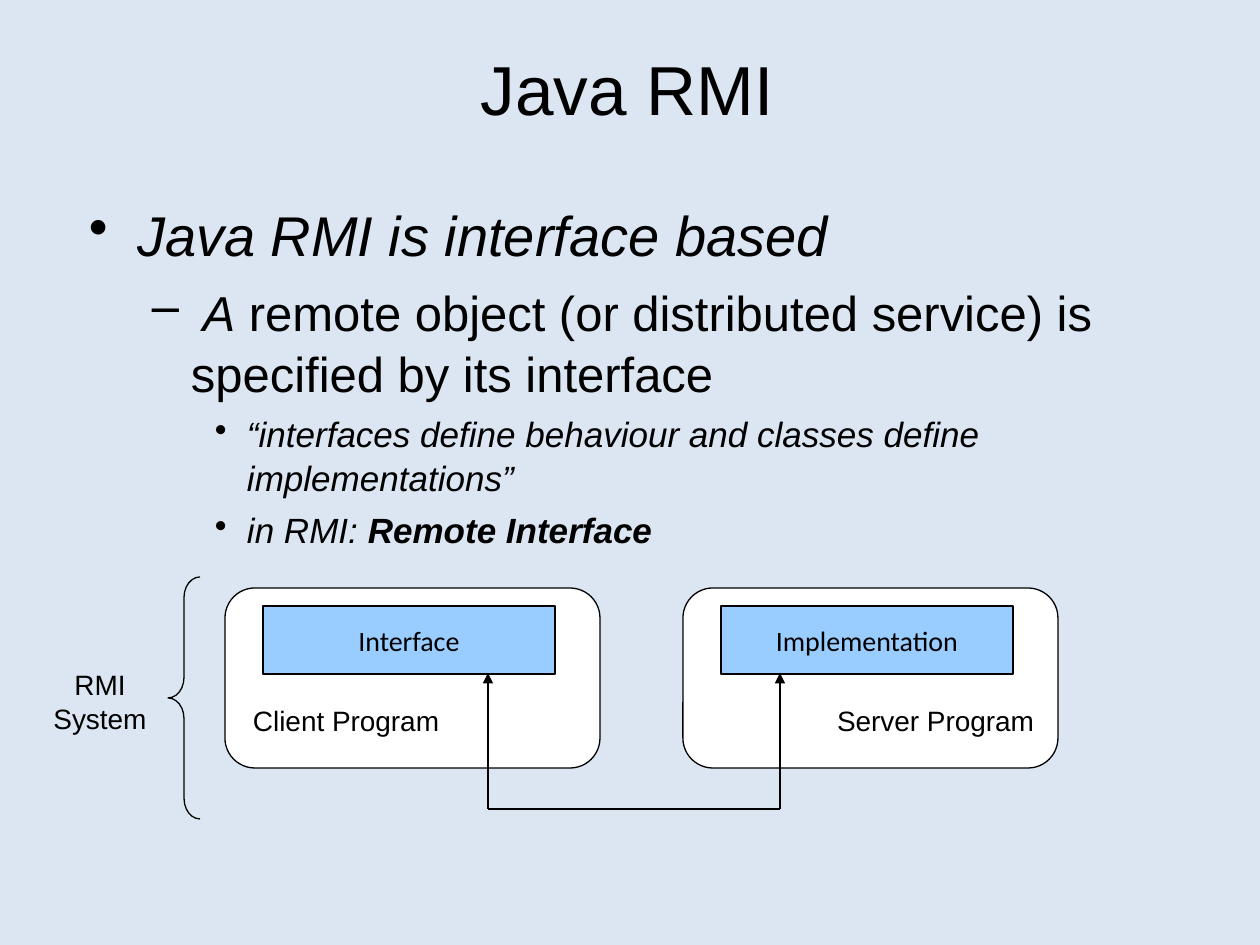
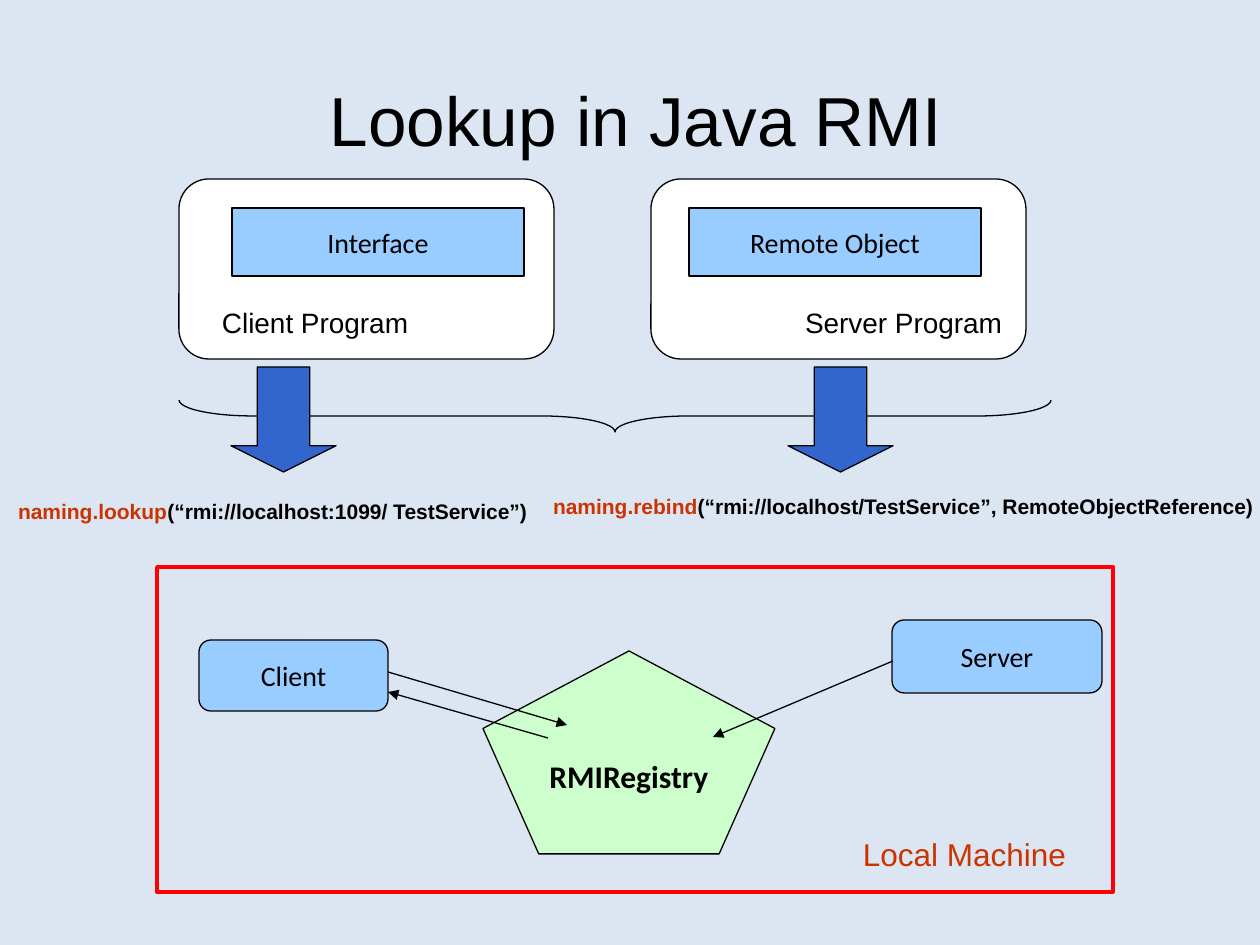
"""Build two slides on Java RMI: interface based design and registry lookup."""
import lxml.etree
import pptx
import pptx.dml.color
import pptx.enum.shapes
import pptx.enum.text
import pptx.oxml.ns
import pptx.util

EMU_PER_PX = 914400 / 126
BACKGROUND = pptx.dml.color.RGBColor(0xDC, 0xE6, 0xF2)
BLACK = pptx.dml.color.RGBColor(0x00, 0x00, 0x00)
WHITE = pptx.dml.color.RGBColor(0xFF, 0xFF, 0xFF)
LIGHT_BLUE = pptx.dml.color.RGBColor(0x99, 0xCC, 0xFF)
ARROW_BLUE = pptx.dml.color.RGBColor(0x33, 0x66, 0xCC)
LIGHT_GREEN = pptx.dml.color.RGBColor(0xCC, 0xFF, 0xCC)
RED = pptx.dml.color.RGBColor(0xFF, 0x00, 0x00)
RUST = pptx.dml.color.RGBColor(0xCC, 0x33, 0x00)

SHAPE = pptx.enum.shapes.MSO_SHAPE
CONNECTOR = pptx.enum.shapes.MSO_CONNECTOR
ALIGN = pptx.enum.text.PP_ALIGN
ANCHOR = pptx.enum.text.MSO_ANCHOR

LINE_WIDTH = 0.75
PROGRAM_SIZE = (375, 180)
PART_SIZE = (292, 68)
LABEL_SIZE = (248, 45)
CLIENT_LABEL_SHIFT = -22
SERVER_LABEL_SHIFT = 104
LABEL_DROP = 92
BULLET_LEVELS = [
    {"mark": "•", "margin": 48, "hanging": 48, "size": 32, "before": 0},
    {"mark": "–", "margin": 102, "hanging": 39, "size": 28, "before": 7},
    {"mark": "•", "margin": 158, "hanging": 32, "size": 20, "before": 5},
]


def px(*lengths):
    """Turn lengths in px into a list of EMU lengths."""
    return [pptx.util.Emu(round(length * EMU_PER_PX)) for length in lengths]


def add_run(paragraph, text, size, color=BLACK, font="Arial", bold=False, italic=False):
    """Add one run of text to a paragraph."""
    run = paragraph.add_run()
    run.text = text
    run.font.size = pptx.util.Pt(size)
    run.font.name = font
    run.font.color.rgb = color
    run.font.bold = bold
    run.font.italic = italic


def set_margins(frame, horizontal, vertical):
    """Set the inner margins of a text frame."""
    frame.margin_left = frame.margin_right = px(horizontal)[0]
    frame.margin_top = frame.margin_bottom = px(vertical)[0]


def add_text(slide, box, runs, size, align=ALIGN.LEFT, bold=False):
    """Add a wrapping text box with one paragraph of (text, color) runs."""
    frame = slide.shapes.add_textbox(*px(*box)).text_frame
    frame.word_wrap = True
    set_margins(frame, 12, 6)
    paragraph = frame.paragraphs[0]
    paragraph.alignment = align
    for text, color in runs:
        add_run(paragraph, text, size, color, bold=bold)
    return frame


def add_title(slide, box, text):
    """Add the centred slide title."""
    frame = add_text(slide, box, [(text, BLACK)], 39.6, ALIGN.CENTER)
    set_margins(frame, 0, 0)
    frame.vertical_anchor = ANCHOR.MIDDLE


def add_bullets(slide, box, bullets):
    """Add an outline of (level, runs) bullets, each run being (text, italic, bold)."""
    frame = slide.shapes.add_textbox(*px(*box)).text_frame
    frame.word_wrap = True
    set_margins(frame, 0, 0)
    for index, (level, runs) in enumerate(bullets):
        style = BULLET_LEVELS[level]
        paragraph = frame.add_paragraph() if index else frame.paragraphs[0]
        paragraph.level = level
        paragraph.line_spacing = 1.04
        paragraph.space_before = pptx.util.Pt(style["before"])
        margin, indent = px(style["margin"], -style["hanging"])
        properties = paragraph._p.get_or_add_pPr()
        properties.set("marL", str(margin))
        properties.set("indent", str(indent))
        mark = lxml.etree.SubElement(properties, pptx.oxml.ns.qn("a:buChar"))
        mark.set("char", style["mark"])
        for text, italic, bold in runs:
            add_run(paragraph, text, style["size"], italic=italic, bold=bold)


def add_outline(slide, kind, box, fill=None, line=BLACK, width=LINE_WIDTH, adjustments=()):
    """Add a preset shape with a plain line and an optional fill."""
    shape = slide.shapes.add_shape(kind, *px(*box))
    shape.shadow.inherit = False
    if fill is None:
        shape.fill.background()
    else:
        shape.fill.solid()
        shape.fill.fore_color.rgb = fill
    shape.line.color.rgb = line
    shape.line.width = pptx.util.Pt(width)
    for index, value in enumerate(adjustments):
        shape.adjustments[index] = value
    return shape


def add_node(slide, kind, box, text, fill=LIGHT_BLUE, size=16, bold=False):
    """Add a filled shape with a centred caption."""
    shape = add_outline(slide, kind, box, fill)
    frame = shape.text_frame
    frame.word_wrap = False
    frame.vertical_anchor = ANCHOR.MIDDLE
    set_margins(frame, 12, 6)
    paragraph = frame.paragraphs[0]
    paragraph.alignment = ALIGN.CENTER
    add_run(paragraph, text, size, font="Calibri", bold=bold)


def add_program(slide, name, corner, part, part_corner, label_shift):
    """Add a program frame holding one part and a name below it."""
    add_outline(slide, SHAPE.ROUNDED_RECTANGLE, (*corner, *PROGRAM_SIZE), WHITE)
    add_node(slide, SHAPE.RECTANGLE, (*part_corner, *PART_SIZE), part)
    left, top = part_corner
    label_box = (left + label_shift, top + LABEL_DROP, *LABEL_SIZE)
    add_text(slide, label_box, [(name, BLACK)], 16)


def add_line(slide, start, end, kind=CONNECTOR.STRAIGHT, arrow=True):
    """Add a connector, with an arrowhead at its end when asked."""
    connector = slide.shapes.add_connector(kind, *px(*start, *end))
    connector.line.color.rgb = BLACK
    connector.line.width = pptx.util.Pt(LINE_WIDTH)
    if arrow:
        line = connector.line._get_or_add_ln()
        lxml.etree.SubElement(line, pptx.oxml.ns.qn("a:tailEnd")).set("type", "triangle")
    lxml.etree.SubElement(connector._element.spPr, pptx.oxml.ns.qn("a:effectLst"))


def add_slide(presentation):
    """Add a blank slide with the shared background."""
    slide = presentation.slides.add_slide(presentation.slide_layouts[6])
    slide.background.fill.solid()
    slide.background.fill.fore_color.rgb = BACKGROUND
    return slide


def build_interface_slide(presentation):
    """Show that RMI is interface based."""
    slide = add_slide(presentation)
    add_title(slide, (89, 42, 1076, 92), "Java RMI")
    add_bullets(slide, (89, 198, 1076, 321), [
        (0, [("Java RMI is interface based", True, False)]),
        (1, [(" A", True, False),
             (" remote object (or distributed service) is specified by its interface",
              False, False)]),
        (2, [("“interfaces define behaviour and classes define implementations”",
              True, False)]),
        (2, [("in RMI: ", True, False), ("Remote Interface", True, True)]),
    ])
    add_program(slide, "Client Program", (225, 588), "Interface", (263, 606),
                CLIENT_LABEL_SHIFT)
    add_program(slide, "Server Program", (683, 588), "Implementation", (721, 606),
                SERVER_LABEL_SHIFT)
    client_x, server_x, link_y, part_bottom = 488, 780, 809, 673
    for x in (client_x, server_x):
        add_line(slide, (x, link_y), (x, part_bottom))
    add_line(slide, (client_x, link_y), (server_x, link_y), CONNECTOR.ELBOW, arrow=False)
    add_outline(slide, SHAPE.LEFT_BRACE, (168, 577, 32, 242), adjustments=(0.64, 0.5))
    add_text(slide, (21, 662, 158, 74), [("RMI System", BLACK)], 16, ALIGN.CENTER)


def build_lookup_slide(presentation):
    """Show how client and server use the registry."""
    slide = add_slide(presentation)
    add_title(slide, (53, 73, 1166, 92), "Lookup in Java RMI")
    add_node(slide, SHAPE.REGULAR_PENTAGON, (483, 651, 292, 203), "RMIRegistry",
             LIGHT_GREEN, 18, bold=True)
    add_node(slide, SHAPE.ROUNDED_RECTANGLE, (892, 620, 210, 73), "Server")
    add_node(slide, SHAPE.ROUNDED_RECTANGLE, (199, 640, 189, 71), "Client")
    for start, end in [((893, 661), (713, 737)),
                       ((388, 672), (567, 725)),
                       ((548, 738), (388, 692))]:
        add_line(slide, start, end)
    add_text(slide, (541, 488, 787, 37),
             [("naming.rebind", RUST),
              ("(“rmi://localhost/TestService”, RemoteObjectReference)", BLACK)],
             12, bold=True)
    add_text(slide, (6, 493, 536, 34),
             [("naming.lookup", RUST), ("(“rmi://localhost:1099/ TestService”)", BLACK)],
             12, bold=True)
    add_program(slide, "Client Program", (179, 179), "Interface", (232, 208),
                CLIENT_LABEL_SHIFT)
    add_program(slide, "Server Program", (651, 179), "Remote Object", (689, 208),
                SERVER_LABEL_SHIFT)
    brace = add_outline(slide, SHAPE.RIGHT_BRACE, (599, -20, 32, 872),
                        adjustments=(2.31, 0.5))
    brace.rotation = 90
    add_outline(slide, SHAPE.RECTANGLE, (157, 567, 956, 325), line=RED, width=2)
    add_text(slide, (851, 829, 252, 50), [("Local Machine", RUST)], 18)
    for left in (231, 788):
        add_outline(slide, SHAPE.DOWN_ARROW, (left, 367, 105, 105), ARROW_BLUE,
                    adjustments=(0.5, 0.25))


def main():
    """Build and save the presentation."""
    presentation = pptx.Presentation()
    presentation.slide_width, presentation.slide_height = px(1260, 945)
    build_interface_slide(presentation)
    build_lookup_slide(presentation)
    presentation.save("out.pptx")


if __name__ == "__main__":
    main()
